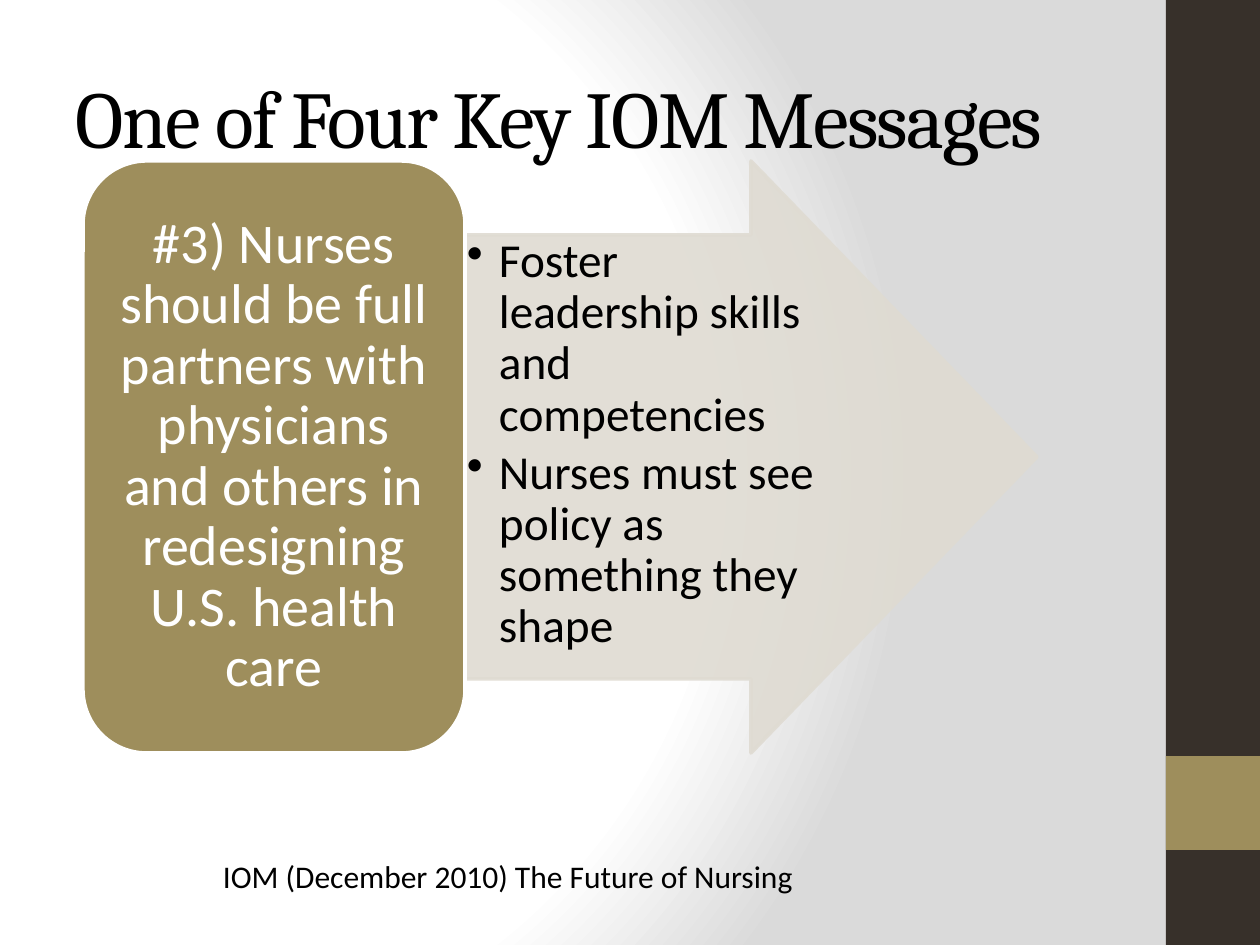
from pptx import Presentation
from pptx.dml.color import RGBColor
from pptx.enum.shapes import MSO_SHAPE as Kind
from pptx.enum.text import PP_ALIGN as Align, MSO_ANCHOR as Anchor
from pptx.oxml import parse_xml
from pptx.oxml.ns import qn
from pptx.util import Pt
from lxml.etree import SubElement as Sub

PX = 914400 / 126
GOLD, DARK, SAND, WHITE, BLACK = "9E8E5C", "37302A", "DFDBD2", "FFFFFF", "000000"
TITLE = "One of Four Key IOM Messages"
KEY = "#3) Nurses should be full partners with physicians and others in redesigning U.S. health care"
STEPS = ["Foster leadership skills and competencies",
         "Nurses must see policy as something they shape"]
CREDIT = "IOM (December 2010) The Future of Nursing"
BARS = [((1166, 0, 94, 945), DARK), ((1166, 756, 94, 94), GOLD)]
STOPS = [(0, WHITE), (75, WHITE), (100, "DADADA")]
NS = " ".join(f'xmlns:{p}="http://schemas.openxmlformats.org/{u}/2006/main"'
              for p, u in (("a", "drawingml"), ("p", "presentationml")))


def px(n):
    return round(n * PX)


def rgb(code):
    return RGBColor.from_string(code)


def shape(kind, box, fill, line=None):
    item = slide.shapes.add_shape(kind, *map(px, box))
    item.shadow.inherit = False
    item.fill.solid()
    item.fill.fore_color.rgb = rgb(fill)
    if line:
        item.line.color.rgb = rgb(line)
        item.line.width = Pt(2)
    else:
        item.line.fill.background()
    return item


def write(item, lines, size, color, font="Calibri", align=Align.LEFT,
          anchor=Anchor.TOP, pad=(13, 6), wrap=True, pitch=None, after=0):
    frame = item.text_frame
    frame.text = "\n".join(lines)
    frame.word_wrap = wrap
    frame.vertical_anchor = anchor
    frame.margin_left = frame.margin_right = px(pad[0])
    frame.margin_top = frame.margin_bottom = px(pad[1])
    for para in frame.paragraphs:
        para.alignment = align
        para.line_spacing = pitch
        para.space_after = Pt(after)
        para.font.size = Pt(size)
        para.font.name = font
        para.font.color.rgb = rgb(color)
    return frame


def label(box, text, size, **look):
    item = slide.shapes.add_textbox(*map(px, box))
    return write(item, [text], size, BLACK, **look)


deck = Presentation()
deck.slide_width, deck.slide_height = px(1260), px(945)
slide = deck.slides.add_slide(deck.slide_layouts[6])

stops = "".join(f'<a:gs pos="{pos * 1000}"><a:srgbClr val="{code}"/></a:gs>'
                for pos, code in STOPS)
slide.element.cSld.insert(0, parse_xml(
    f'<p:bg {NS}><p:bgPr><a:gradFill rotWithShape="1"><a:gsLst>{stops}</a:gsLst>'
    '<a:path path="circle"><a:fillToRect l="20000" t="50000" r="100000" b="50000"/></a:path>'
    '</a:gradFill><a:effectLst/></p:bgPr></p:bg>'))

for box, fill in BARS:
    shape(Kind.RECTANGLE, box, fill)

title = label((63, 38, 1050, 195 - 38), TITLE, 46, font="Cambria", anchor=Anchor.MIDDLE)
title.paragraphs[0].runs[0].font._element.set("spc", "-100")

arrow = shape(Kind.RIGHT_ARROW, (465, 161, 572, 592), SAND, SAND)
arrow.adjustments[0], arrow.adjustments[1] = 0.75, 0.5
for tint in list(arrow._element.spPr.iter(qn("a:srgbClr"))):
    Sub(tint, qn("a:alpha"), val="90000")
steps = write(arrow, STEPS, 27, BLACK, pad=(2, 2), pitch=0.9, after=4)
for para in steps.paragraphs:
    props = para._p.get_or_add_pPr()
    props.set("marL", str(px(32)))
    props.set("indent", str(-px(32)))
    Sub(props, qn("a:buChar"), char="•")

card = shape(Kind.ROUNDED_RECTANGLE, (83, 161, 382, 592), GOLD, WHITE)
write(card, [KEY], 32, WHITE, align=Align.CENTER, anchor=Anchor.MIDDLE,
      pad=(16, 9), pitch=0.9)

label((210, 851, 602, 50), CREDIT, 18, wrap=False)

deck.save("out.pptx")
